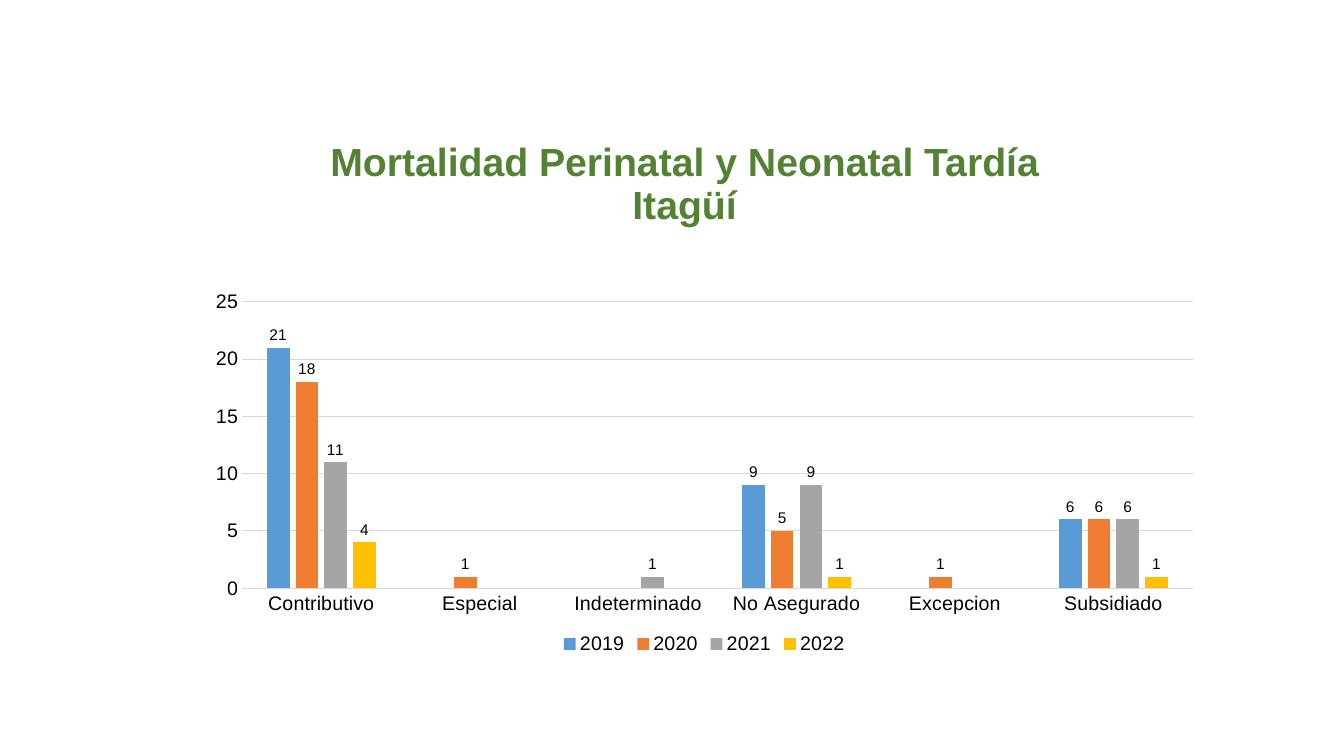
from pptx import Presentation
from pptx.chart.data import CategoryChartData
from pptx.dml.color import RGBColor
from pptx.enum.chart import XL_CHART_TYPE as ChartType
from pptx.enum.chart import XL_LABEL_POSITION as LabelPosition
from pptx.enum.chart import XL_LEGEND_POSITION as LegendPosition
from pptx.enum.chart import XL_TICK_MARK as TickMark
from pptx.enum.text import MSO_ANCHOR as Anchor
from pptx.enum.text import MSO_AUTO_SIZE as AutoSize
from pptx.enum.text import PP_ALIGN as Align
from pptx.util import Inches, Pt

GREEN = RGBColor(0x54, 0x82, 0x35)
BLACK = RGBColor(0x00, 0x00, 0x00)
GRID_GRAY = RGBColor(0xD9, 0xD9, 0xD9)
BLUE = RGBColor(0x5B, 0x9B, 0xD5)
ORANGE = RGBColor(0xED, 0x7D, 0x31)
GRAY = RGBColor(0xA5, 0xA5, 0xA5)
YELLOW = RGBColor(0xFF, 0xC0, 0x00)
FONT = "Arial"

REGIMES = ["Contributivo", "Especial", "Indeterminado",
           "No Asegurado", "Excepcion", "Subsidiado"]
DEATHS_BY_YEAR = [
    ("2019", BLUE, (21, None, None, 9, None, 6)),
    ("2020", ORANGE, (18, 1, None, 5, 1, 6)),
    ("2021", GRAY, (11, None, 1, 9, None, 6)),
    ("2022", YELLOW, (4, None, None, 1, None, 1)),
]


def style_font(font, size, color=BLACK, bold=False):
    font.name = FONT
    font.size = Pt(size)
    font.bold = bold
    font.color.rgb = color


def write_text(frame, text, *, size, color, bold=False, align=Align.CENTER,
               anchor=Anchor.BOTTOM, line_spacing=0.9):
    frame.word_wrap = True
    frame.auto_size = AutoSize.NONE
    frame.vertical_anchor = anchor
    paragraph = frame.paragraphs[0]
    paragraph.text = text
    paragraph.alignment = align
    paragraph.line_spacing = line_spacing
    for run in paragraph.runs:
        style_font(run.font, size, color, bold)


def style_line(line):
    line.color.rgb = GRID_GRAY
    line.width = Pt(0.75)


def add_heading(slide, left, top, width, height):
    heading = slide.shapes.title
    heading.left, heading.top = Inches(left), Inches(top)
    heading.width, heading.height = Inches(width), Inches(height)
    # The vertical tab is a line break within the paragraph
    write_text(heading.text_frame,
               "Mortalidad Perinatal y Neonatal Tardía\vItagüí",
               size=28, color=GREEN, bold=True)


def add_mortality_chart(slide, left, top, width, height):
    deaths = CategoryChartData(number_format="General")
    deaths.categories = REGIMES
    for year, _, counts in DEATHS_BY_YEAR:
        deaths.add_series(year, counts)
    chart = slide.shapes.add_chart(
        ChartType.COLUMN_CLUSTERED, Inches(left), Inches(top),
        Inches(width), Inches(height), deaths).chart
    chart.has_title = False
    style_font(chart.font, 14)

    # Legend
    chart.has_legend = True
    chart.legend.position = LegendPosition.BOTTOM
    chart.legend.include_in_layout = False
    style_font(chart.legend.font, 14)

    # Axes
    for axis in (chart.category_axis, chart.value_axis):
        axis.major_tick_mark = axis.minor_tick_mark = TickMark.NONE
        style_font(axis.tick_labels.font, 14)
    style_line(chart.category_axis.format.line)
    counts_axis = chart.value_axis
    counts_axis.minimum_scale, counts_axis.maximum_scale = 0, 25
    counts_axis.major_unit = 5
    counts_axis.format.line.fill.background()
    counts_axis.has_major_gridlines = True
    style_line(counts_axis.major_gridlines.format.line)

    # Columns, one colour per year
    columns = chart.plots[0]
    columns.gap_width = 219
    columns.overlap = -27
    columns.vary_by_categories = False
    for year_series, (_, color, _) in zip(columns.series, DEATHS_BY_YEAR):
        year_series.format.fill.solid()
        year_series.format.fill.fore_color.rgb = color
        year_series.invert_if_negative = False
        labels = year_series.data_labels
        labels.show_value = True
        labels.position = LabelPosition.OUTSIDE_END
        style_font(labels.font, 11)


def main():
    deck = Presentation()
    deck.slide_width, deck.slide_height = Inches(13.33), Inches(7.5)
    slide = deck.slides.add_slide(deck.slide_layouts[0])
    subtitle = slide.placeholders[1].element
    subtitle.getparent().remove(subtitle)
    add_heading(slide, 1.55, 1.31, 10.48, 1)
    add_mortality_chart(slide, 1.94, 2.81, 10.09, 3.73)
    deck.save("out.pptx")


if __name__ == "__main__":
    main()
